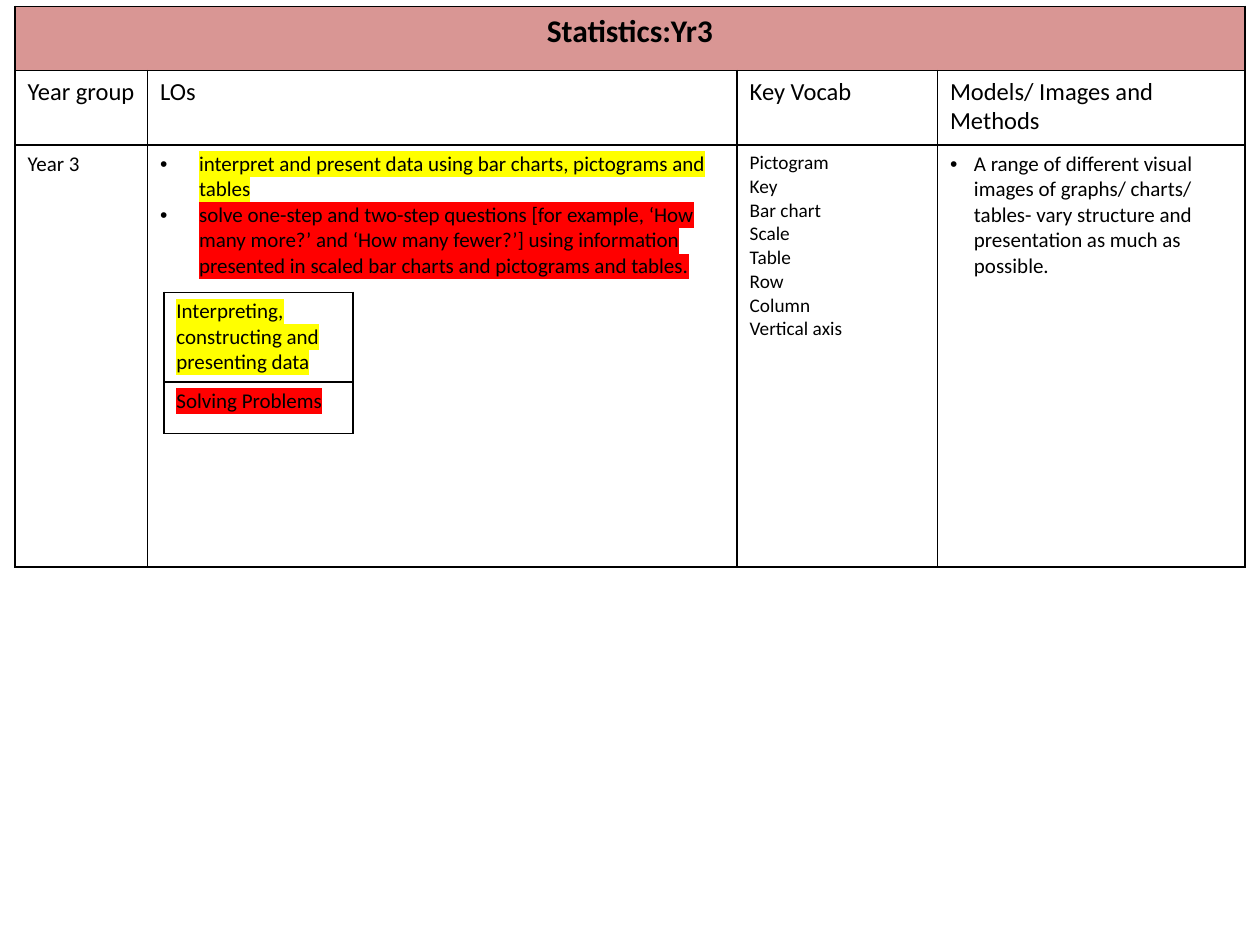
import pptx
import pptx.dml.color
import pptx.enum.text
import pptx.oxml
import pptx.oxml.ns
import pptx.util
from pptx.util import Inches

COLOURS = {
    "black": "000000",
    "white": "FFFFFF",
    "rose": "D99694",
    "yellow": "FFFF00",
    "red": "FF0000",
}
NAMESPACE = pptx.oxml.ns.nsdecls("a")


class SlideBuilder:
    """Holds the style and the current slide."""

    font_name = "Calibri"
    border_width = pptx.util.Pt(1)

    def __init__(self, slide):
        self.slide = slide

    def table(self, left, top, columns, rows):
        """Add a plain table with black borders and no fill."""
        frame = self.slide.shapes.add_table(
            len(rows), len(columns), Inches(left), Inches(top),
            Inches(sum(columns)), Inches(sum(rows)))
        table = frame.table
        table.first_row = table.horz_banding = False
        for column, width in zip(table.columns, columns):
            column.width = Inches(width)
        for row, height in zip(table.rows, rows):
            row.height = Inches(height)
        for cell in table.iter_cells():
            cell.fill.background()
            self.borders(cell)
        return table

    def borders(self, cell):
        properties = cell._tc.get_or_add_tcPr()
        for index, side in enumerate(("lnL", "lnR", "lnT", "lnB")):
            line = pptx.oxml.parse_xml(
                f'<a:{side} {NAMESPACE} w="{self.border_width}"><a:solidFill>'
                f'<a:srgbClr val="{COLOURS["black"]}"/></a:solidFill></a:{side}>')
            properties.insert(index, line)

    def fill(self, cell, colour):
        cell.fill.solid()
        cell.fill.fore_color.rgb = pptx.dml.color.RGBColor.from_string(COLOURS[colour])

    def text(self, cell, lines, size, bold=False, highlights=(), indent=None, centred=False):
        """Write one paragraph a line; an indent makes the lines bullets."""
        frame = cell.text_frame
        for index, line in enumerate(lines):
            paragraph = frame.add_paragraph() if index else frame.paragraphs[0]
            if centred:
                paragraph.alignment = pptx.enum.text.PP_ALIGN.CENTER
            if indent:
                self.bullet(paragraph, indent)
            run = paragraph.add_run()
            run.text = line
            run.font.name = self.font_name
            run.font.size = pptx.util.Pt(size)
            run.font.bold = bold
            run.font.color.rgb = pptx.dml.color.RGBColor.from_string(COLOURS["black"])
            if highlights:
                self.highlight(run, highlights[index])

    def bullet(self, paragraph, indent):
        properties = paragraph._p.get_or_add_pPr()
        properties.set("marL", str(Inches(indent)))
        properties.set("indent", str(-Inches(indent)))
        properties.append(pptx.oxml.parse_xml(f'<a:buFont {NAMESPACE} typeface="Arial"/>'))
        properties.append(pptx.oxml.parse_xml(f'<a:buChar {NAMESPACE} char="•"/>'))

    def highlight(self, run, colour):
        latin = run._r.get_or_add_rPr().find(pptx.oxml.ns.qn("a:latin"))
        latin.addprevious(pptx.oxml.parse_xml(
            f'<a:highlight {NAMESPACE}><a:srgbClr val="{COLOURS[colour]}"/></a:highlight>'))


def main():
    presentation = pptx.Presentation()
    presentation.slide_width = Inches(10)
    presentation.slide_height = Inches(7.5)
    builder = SlideBuilder(presentation.slides.add_slide(presentation.slide_layouts[6]))

    # Curriculum table: title row
    curriculum = builder.table(0.12, 0.05, [1.05, 4.68, 1.59, 2.44], [0.51, 0.59, 3.35])
    title = curriculum.cell(0, 0)
    title.merge(curriculum.cell(0, 3))
    builder.fill(title, "rose")
    builder.text(title, ["Statistics:Yr3"], 18, bold=True, centred=True)

    # Column headings
    headings = ["Year group", "LOs", "Key Vocab", "Models/ Images and Methods"]
    for column, heading in enumerate(headings):
        builder.text(curriculum.cell(1, column), [heading], 14)
        if column:
            for row in (1, 2):
                builder.fill(curriculum.cell(row, column), "white")

    # Year 3 content
    year, objectives, vocabulary, models = (curriculum.cell(2, column) for column in range(4))
    builder.text(year, ["Year 3"], 12)
    builder.text(objectives, [
        "interpret and present data using bar charts, pictograms and tables",
        "solve one-step and two-step questions [for example, ‘How many more?’ and "
        "‘How many fewer?’] using information presented in scaled bar charts and "
        "pictograms and tables.",
    ], 12, highlights=["yellow", "red"], indent=0.31)
    builder.text(vocabulary, ["Pictogram", "Key", "Bar chart", "Scale", "Table", "Row",
                              "Column", "Vertical axis"], 11)
    builder.text(models, [
        "A range of different visual images of graphs/ charts/ tables- vary structure "
        "and presentation as much as possible.",
    ], 12, indent=0.19)

    # Colour key
    colour_key = builder.table(1.3, 2.32, [1.5], [0.71, 0.41])
    entries = [("Interpreting, constructing and presenting data", "yellow"),
               ("Solving Problems", "red")]
    for row, (label, colour) in enumerate(entries):
        builder.text(colour_key.cell(row, 0), [label], 12, highlights=[colour])

    presentation.save("out.pptx")


if __name__ == "__main__":
    main()
